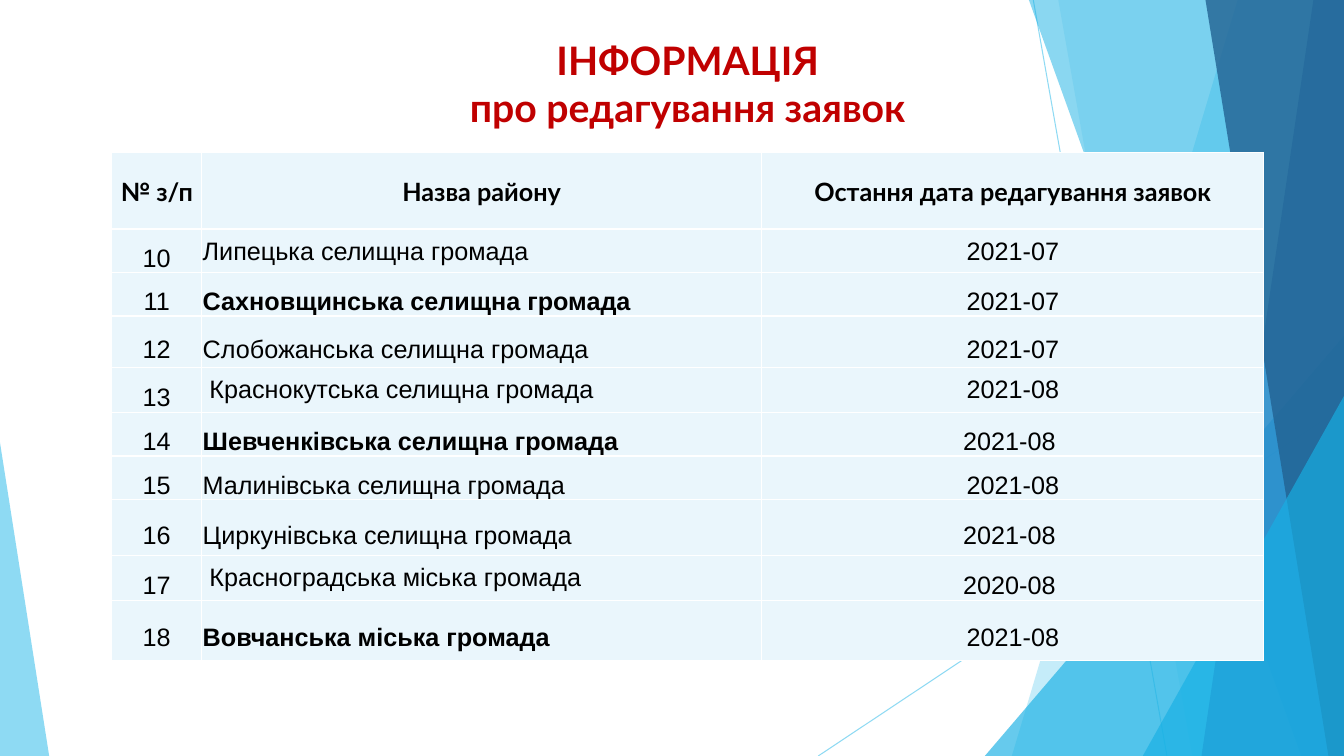
from lxml import etree
from pptx import Presentation
from pptx.dml.color import RGBColor
from pptx.enum import shapes, text
from pptx.oxml.ns import qn
from pptx.util import Cm, Pt

WHITE = RGBColor(0xFF, 0xFF, 0xFF)
BLACK = RGBColor(0, 0, 0)
RED = RGBColor(0xC0, 0, 0)
PALE = RGBColor(0xEA, 0xF6, 0xFC)
SKY = RGBColor(0x5F, 0xCB, 0xEF)
CYAN = RGBColor(0x17, 0xB0, 0xE4)
BLUE = RGBColor(0x2E, 0x83, 0xC3)
NAVY = RGBColor(0x22, 0x62, 0x92)

TITLE = ("ІНФОРМАЦІЯ", "про редагування заявок")
HEADS = ("№ з/п", "Назва району", "Остання дата редагування заявок")
COLS = (2.26, 14.12, 12.65)
HEAD_H = 1.93
# Name, date, row height, bold name, layout of the name and date cells
ROWS = (
    ("Липецька селищна громада", "2021-07", 1.09, False, "single", "single"),
    ("Сахновщинська селищна громада", "2021-07", 1.09, True, "wide", "wide"),
    ("Слобожанська селищна громада", "2021-07", 1.3, False, "wide", "wide"),
    ("Краснокутська селищна громада", "2021-08", 1.13, False, "padded", "padded"),
    ("Шевченківська селищна громада", "2021-08 ", 1.09, True, "wide", "wide"),
    ("Малинівська селищна громада", "2021-08", 1.09, False, "wide", "wide"),
    ("Циркунівська селищна громада", "2021-08 ", 1.42, False, "wide", "wide"),
    ("Красноградська міська громада", "2020-08 ", 1.13, False, "padded", "wide"),
    ("Вовчанська міська громада", "2021-08", 1.5, True, "wide", "wide"),
)
FIRST = 10


def set_alpha(fill, pct):
    """Make a solid fill or line fill show at pct percent opacity."""
    color = fill._xPr.find(qn("a:solidFill"))[0]
    etree.SubElement(color, qn("a:alpha")).set("val", str(pct * 1000))


def paint(shape, color, pct):
    shape.shadow.inherit = False
    shape.fill.solid()
    shape.fill.fore_color.rgb = color
    set_alpha(shape.fill, pct)
    shape.line.fill.background()


def add_ray(slide, start, end):
    ray = slide.shapes.add_connector(
        shapes.MSO_CONNECTOR.STRAIGHT, *map(Cm, start + end))
    ray.line.width = Pt(0.75)
    ray.line.color.rgb = SKY
    set_alpha(ray.line.fill, 70)
    etree.SubElement(ray._element.spPr, qn("a:effectLst"))


def add_band(slide, box, top, foot, color, pct):
    """Fill from a slanted left edge to the right side of the box.

    top and foot are the widths of the band at its two ends.
    """
    x, y, w, h = box
    right, low = x + w, y + h
    pen = slide.shapes.build_freeform(Cm(right - top), Cm(y))
    pen.add_line_segments(
        [(Cm(right), Cm(y)), (Cm(right), Cm(low)), (Cm(right - foot), Cm(low))])
    paint(pen.convert_to_shape(), color, pct)


def add_peak(slide, box, w, h, color, pct, left=False):
    """Stand a right triangle in a bottom corner of the box."""
    x = box[0] if left else box[0] + box[2] - w
    y = box[1] + box[3] - h
    peak = slide.shapes.add_shape(
        shapes.MSO_SHAPE.ISOSCELES_TRIANGLE, Cm(x), Cm(y), Cm(w), Cm(h))
    peak.adjustments[0] = 0 if left else 1
    paint(peak, color, pct)


def add_decor(slide, box):
    x, y, w, h = box
    right, low = x + w, y + h
    add_ray(slide, (right - 7.83, y), (right - 4.46, low))
    add_ray(slide, (right, low - 8.81), (right - 13.25, low))
    add_band(slide, box, 2.68, 8.37, SKY, 36)
    add_band(slide, box, 7.2, 3.82, SKY, 20)
    add_peak(slide, box, 9.05, 10.59, CYAN, 66)
    add_band(slide, box, 7.94, 1.08, CYAN, 50)
    add_band(slide, box, 0.77, 3.59, BLUE, 70)
    add_band(slide, box, 3.49, 0.39, NAVY, 80)
    add_peak(slide, box, 5.07, 9.07, CYAN, 66)
    add_peak(slide, box, 1.24, 7.9, SKY, 70, left=True)


def add_run(para, words, size, color, font, bold):
    run = para.add_run()
    run.text = words
    run.font.size = Pt(size)
    run.font.name = font
    run.font.bold = bold
    run.font.color.rgb = color


def set_title(slide, box):
    title = slide.shapes.title
    title.left, title.top, title.width, title.height = map(Cm, box)
    slide.shapes._spTree.append(title._element)
    frame = title.text_frame
    frame.word_wrap = True
    frame.auto_size = text.MSO_AUTO_SIZE.NONE
    frame.vertical_anchor = text.MSO_ANCHOR.TOP
    para = frame.paragraphs[0]
    para.alignment = text.PP_ALIGN.CENTER
    para.line_spacing = 1.0
    for i, words in enumerate(TITLE):
        if i:
            para.add_line_break()
        add_run(para, words, 28, RED, "Lato", True)


def add_edges(cell):
    props = cell._tc.get_or_add_tcPr()
    for side in ("lnL", "lnR", "lnT", "lnB"):
        edge = etree.SubElement(props, qn("a:" + side), w=str(Pt(1)))
        fill = etree.SubElement(edge, qn("a:solidFill"))
        etree.SubElement(fill, qn("a:srgbClr"), val=str(WHITE))


def fill_cell(cell, words, mode, font="Arial", bold=False, center=True):
    add_edges(cell)
    cell.fill.solid()
    cell.fill.fore_color.rgb = PALE
    padded = mode == "padded"
    inset = Cm(0.2 if padded else 0.03)
    cell.margin_left = cell.margin_right = cell.margin_top = inset
    cell.margin_bottom = inset if padded else 0
    cell.vertical_anchor = text.MSO_ANCHOR.TOP if padded else text.MSO_ANCHOR.MIDDLE
    para = cell.text_frame.paragraphs[0]
    para.alignment = text.PP_ALIGN.CENTER if center else text.PP_ALIGN.LEFT
    if mode == "wide":
        para.line_spacing = 1.5
    add_run(para, words, 18, BLACK, font, bold)


def add_list(slide, box):
    grid = slide.shapes.add_table(len(ROWS) + 1, len(COLS), *map(Cm, box)).table
    grid.first_row = grid.horz_banding = False
    for col, width in zip(grid.columns, COLS):
        col.width = Cm(width)
    grid.rows[0].height = Cm(HEAD_H)
    for i, words in enumerate(HEADS):
        fill_cell(grid.cell(0, i), words, "single", "Lato", True)
    for i, (name, date, high, bold, left, right) in enumerate(ROWS, 1):
        grid.rows[i].height = Cm(high)
        fill_cell(grid.cell(i, 0), str(FIRST + i - 1), "wide")
        fill_cell(grid.cell(i, 1), name, left, bold=bold, center=False)
        fill_cell(grid.cell(i, 2), date, right)


def main():
    deck = Presentation()
    deck.slide_width, deck.slide_height = Cm(33.87), Cm(19.05)
    slide = deck.slides.add_slide(deck.slide_layouts[5])
    add_decor(slide, (0, 0, 33.87, 19.05))
    set_title(slide, (1.57, 0.79, 31.52, 3.66))
    high = HEAD_H + sum(row[2] for row in ROWS)
    add_list(slide, (2.82, 3.84, sum(COLS), high))
    deck.save("out.pptx")


if __name__ == "__main__":
    main()
